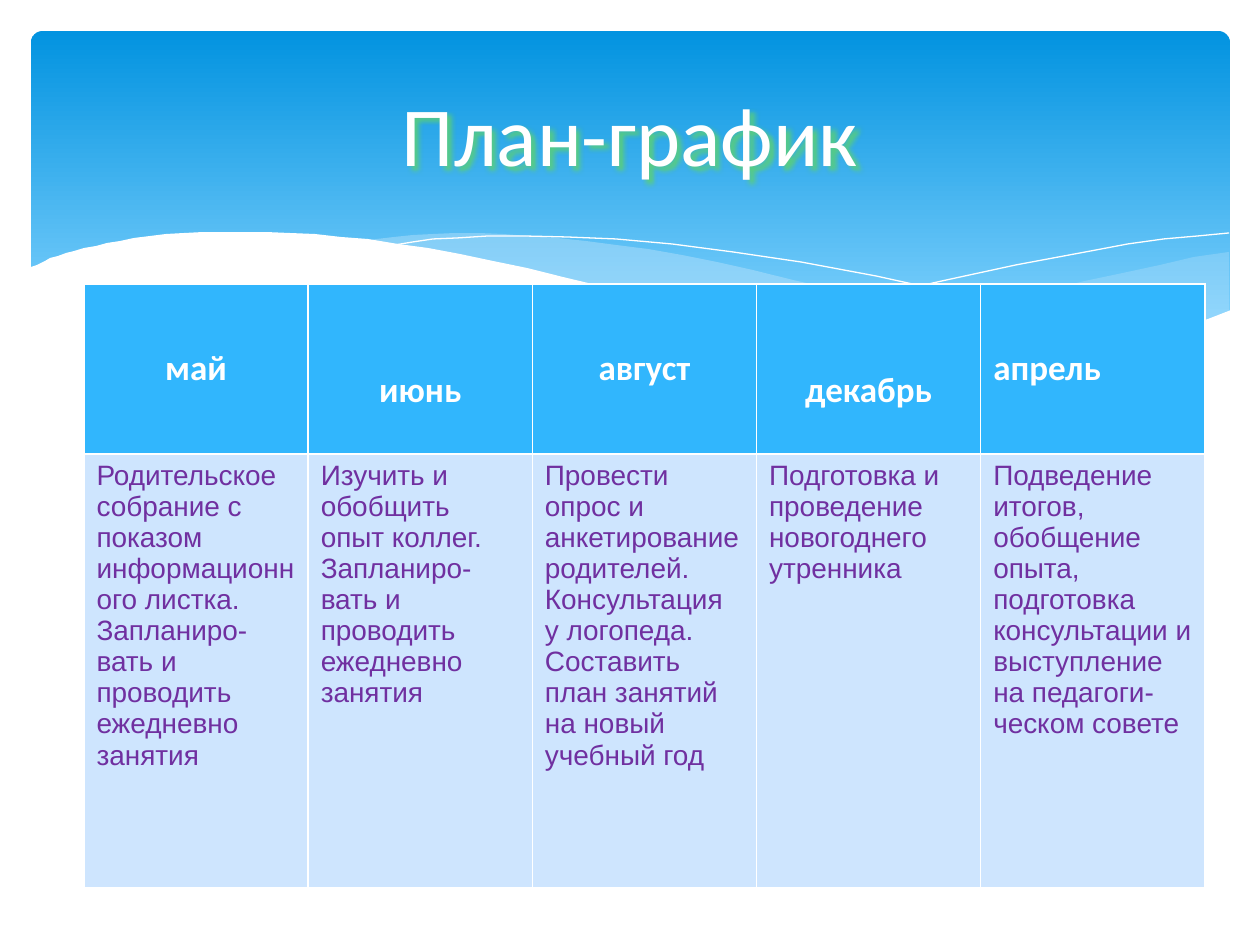
from lxml import etree
from pptx import Presentation
from pptx.dml.color import RGBColor
from pptx.enum.shapes import MSO_SHAPE
from pptx.enum.text import MSO_ANCHOR, PP_ALIGN
from pptx.oxml.ns import qn
from pptx.util import Pt

SCALE = 914400 / 126
ROUNDED = MSO_SHAPE.ROUNDED_RECTANGLE
TOP, MIDDLE = MSO_ANCHOR.TOP, MSO_ANCHOR.MIDDLE
LEFT, CENTER = PP_ALIGN.LEFT, PP_ALIGN.CENTER
COLORS = {
    "white": "FFFFFF", "sky_top": "0293E0", "sky_bottom": "83D3FE",
    "wave": "C6E7FC", "header": "31B6FD", "body": "CEE5FE",
    "purple": "7030A0", "glow": "5BD078",
}

RIGHT_WAVE = [
    (1229, 252), (1194, 257), (1160, 265), (1123, 273), (1085, 281), (1048, 290),
    (1014, 299), (949, 312), (890, 324), (833, 334), (871, 339), (906, 343),
    (939, 347), (969, 349), (998, 349), (1026, 350), (1052, 349), (1076, 348),
    (1099, 345), (1120, 343), (1140, 339), (1160, 334), (1178, 330), (1196, 324),
    (1213, 318), (1229, 311),
]
MIDDLE_WAVE = [
    (1125, 344), (1091, 339), (1055, 334), (1017, 328), (977, 320), (934, 311),
    (890, 302), (842, 291), (793, 280), (753, 270), (717, 262), (682, 255),
    (648, 249), (616, 245), (586, 241), (557, 238), (529, 236), (503, 234),
    (479, 233), (455, 233), (433, 234), (413, 235), (394, 237), (360, 241),
    (407, 247), (456, 256), (509, 266), (566, 280), (619, 292), (668, 302),
    (713, 312), (757, 321), (799, 329), (838, 335), (876, 340), (910, 345),
    (942, 348), (974, 349), (1003, 350), (1031, 350), (1056, 350), (1080, 349),
    (1104, 347), (1125, 344),
]
LONG_CURVE = [
    (389, 246), (413, 242), (433, 239), (457, 238), (488, 236), (524, 236),
    (567, 237), (616, 239), (672, 244), (733, 252), (801, 262), (876, 276),
    (958, 294), (1047, 316), (1143, 343),
]
SHORT_CURVE = [
    (772, 324), (823, 310), (876, 296), (942, 281), (1016, 265), (1091, 251),
    (1128, 244), (1164, 239), (1198, 236), (1229, 233),
]
FRONT_WAVE = [
    (1231, 310), (1208, 319), (1184, 326), (1159, 334), (1133, 339), (1103, 344),
    (1071, 347), (1037, 349), (999, 349), (959, 347), (915, 343), (867, 337),
    (816, 330), (760, 320), (699, 309), (634, 294), (563, 277), (527, 268),
    (493, 261), (460, 254), (428, 248), (398, 244), (368, 239), (341, 237),
    (315, 234), (290, 233), (266, 232), (243, 232), (223, 232), (203, 232),
    (184, 233), (166, 234), (150, 236), (134, 238), (120, 241), (107, 243),
    (96, 246), (84, 248), (74, 251), (66, 253), (58, 256), (50, 258),
    (45, 261), (37, 265), (31, 267), (29, 268), (29, 415), (1231, 415),
]
SCHEDULE = [
    ("май", CENTER, 6, [
        "Родительское собрание с показом информационного листка.",
        "Запланиро-", "вать и проводить ежедневно занятия"]),
    ("июнь", CENTER, 49, [
        "Изучить и обобщить опыт коллег. Запланиро-",
        "вать и проводить ежедневно занятия"]),
    ("август", CENTER, 6, [
        "Провести опрос и анкетирование родителей.",
        "Консультация у логопеда.",
        "Составить план занятий на новый учебный год"]),
    ("декабрь", CENTER, 49, ["Подготовка и проведение новогоднего утренника"]),
    ("апрель", LEFT, 6, [
        "Подведение итогов, обобщение опыта, подготовка консультации "
        "и выступление на педагоги-ческом совете"]),
]


def emu(px):
    """Turn pixels into EMU."""
    return round(px * SCALE)


def rgb(name):
    """Look up a named colour."""
    return RGBColor.from_string(COLORS[name])


def write_text(frame, paragraphs, *, font, size, color, bold=False, align=LEFT):
    """Fill a text frame with evenly formatted paragraphs."""
    for index, text in enumerate(paragraphs):
        para = frame.paragraphs[0] if index == 0 else frame.add_paragraph()
        para.alignment = align
        span = para.add_run()
        span.text = text
        span.font.name = font
        span.font.size = Pt(size)
        span.font.bold = bold
        span.font.color.rgb = rgb(color)


class SchedulePage:
    """Hold the style and the current slide."""

    heading_font = "Calibri"
    body_font = "Arial"

    def __init__(self, page):
        """Keep the slide to draw on."""
        self.page = page
        self.shapes = page.shapes

    def banner(self, left, top, width, height):
        """Add the rounded gradient banner."""
        box = self.shapes.add_shape(ROUNDED, *map(emu, (left, top, width, height)))
        box.adjustments[0] = 0.034
        box.shadow.inherit = False
        box.line.fill.background()
        box.fill.gradient()
        box.fill.gradient_angle = 270
        stops = zip(box.fill.gradient_stops, (0, 0.9), ("sky_top", "sky_bottom"))
        for stop, position, color in stops:
            stop.position = position
            stop.color.rgb = rgb(color)

    def outline(self, points, closed):
        """Build a freeform through the points."""
        builder = self.shapes.build_freeform(*points[0], scale=SCALE)
        builder.add_line_segments(points[1:], close=closed)
        shape = builder.convert_to_shape()
        shape.shadow.inherit = False
        return shape

    def wave(self, points, color, opacity=100):
        """Add a filled wave."""
        shape = self.outline(points, True)
        shape.line.fill.background()
        shape.fill.solid()
        shape.fill.fore_color.rgb = rgb(color)
        if opacity < 100:
            tint = shape.fill._xPr.find(".//" + qn("a:srgbClr"))
            etree.SubElement(tint, qn("a:alpha"), val=str(opacity * 1000))

    def curve(self, points):
        """Add a white hairline."""
        shape = self.outline(points, False)
        shape.fill.background()
        shape.line.color.rgb = rgb("white")
        shape.line.width = Pt(0)

    def title(self, text, left, top, width, height):
        """Place the title in front of the banner with a soft shadow."""
        box = self.shapes.title
        box.left, box.top, box.width, box.height = map(emu, (left, top, width, height))
        box.text_frame.vertical_anchor = MIDDLE
        write_text(box.text_frame, [text], font=self.heading_font, size=48,
                   color="white", align=CENTER)
        effects = etree.SubElement(box._element.spPr, qn("a:effectLst"))
        shadow = etree.SubElement(effects, qn("a:outerShdw"), blurRad="38100",
                                  dist="31750", dir="2700000")
        tint = etree.SubElement(shadow, qn("a:srgbClr"), val=COLORS["glow"])
        etree.SubElement(tint, qn("a:alpha"), val="90000")
        self.shapes._spTree.append(box._element)

    def cell(self, cell, paragraphs, fill, anchor, margin_top, **style):
        """Fill and format one table cell."""
        cell.fill.solid()
        cell.fill.fore_color.rgb = rgb(fill)
        cell.vertical_anchor = anchor
        cell.margin_top = emu(margin_top)
        write_text(cell.text_frame, paragraphs, **style)

    def table(self, schedule, left, top, width, heights):
        """Add the schedule with one column a month."""
        frame = self.shapes.add_table(len(heights), len(schedule), *map(
            emu, (left, top, width, sum(heights))))
        table = frame.table
        for row, height in zip(table.rows, heights):
            row.height = emu(height)
        for index, (month, align, margin_top, tasks) in enumerate(schedule):
            self.cell(table.cell(0, index), [month], "header", MIDDLE, margin_top,
                      font=self.heading_font, size=20, color="white", bold=True,
                      align=align)
            self.cell(table.cell(1, index), tasks, "body", TOP, 6,
                      font=self.body_font, size=16, color="purple")


def main():
    """Build and save the schedule slide."""
    deck = Presentation()
    deck.slide_width, deck.slide_height = emu(1260), emu(945)
    page = SchedulePage(deck.slides.add_slide(deck.slide_layouts[5]))
    page.banner(31, 31, 1199, 340)
    page.wave(RIGHT_WAVE, "wave", 29)
    page.wave(MIDDLE_WAVE, "wave", 40)
    page.curve(LONG_CURVE)
    page.curve(SHORT_CURVE)
    page.wave(FRONT_WAVE, "white")
    page.table(SCHEDULE, 84, 284, 1121, (170, 434))
    page.title("План-график", 63, 47, 1134, 172)
    deck.save("out.pptx")


if __name__ == "__main__":
    main()
